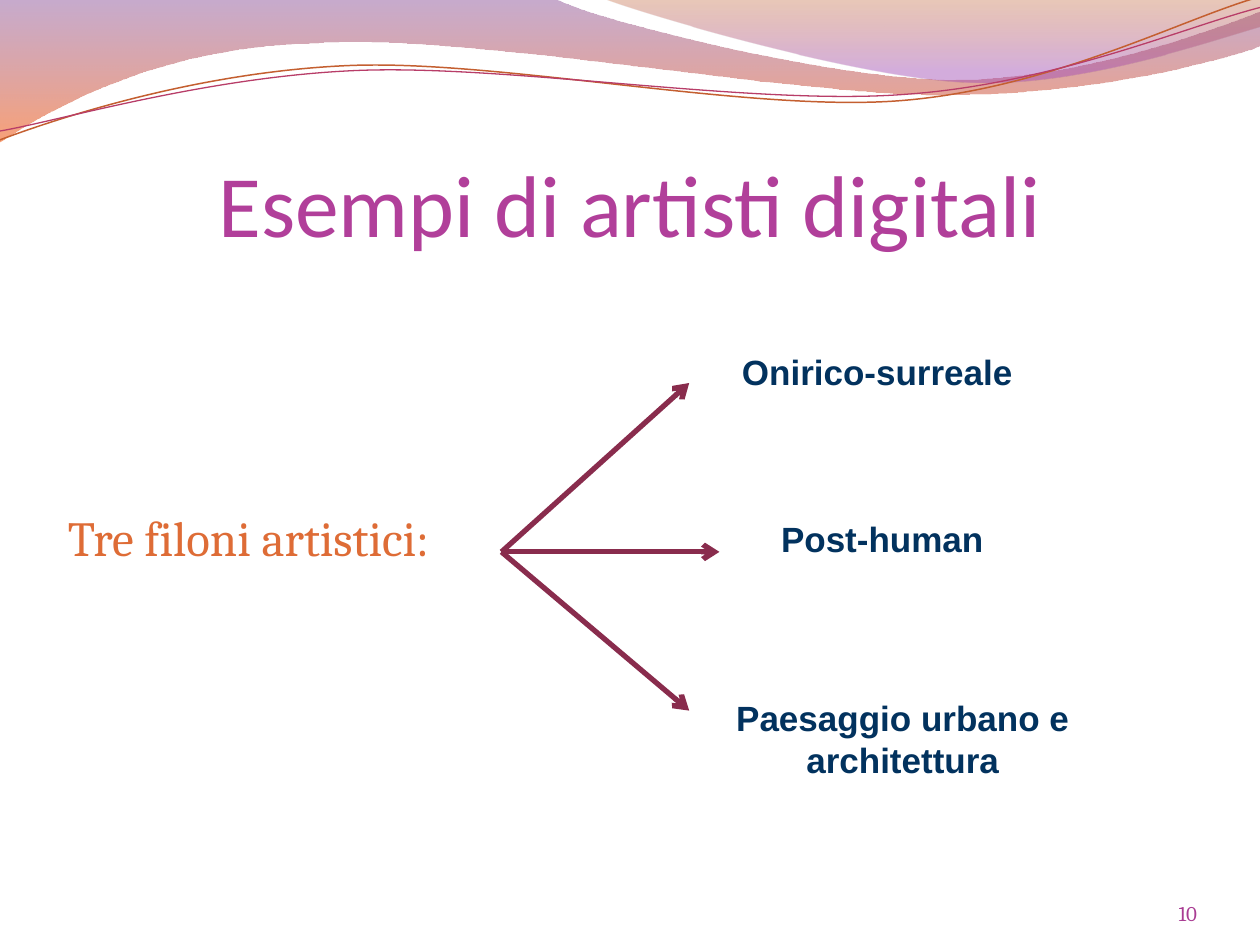
import math
import pptx
import pptx.util
import pptx.dml.color
import pptx.enum.shapes
import pptx.enum.text
import pptx.oxml.ns
from lxml import etree
from dataclasses import dataclass

TITLE = "Esempi di artisti digitali"
LEAD = "Tre filoni artistici:"
PAGE_NUMBER = "10"
BRANCHES = [
    ("Onirico-surreale", (5.79, 2.73, 3.46, 0.44), "left", (5.47, 3.04)),
    ("Post-human", (6.1, 4.06, 2.91, 0.44), "left", (5.71, 4.38)),
    ("Paesaggio urbano e architettura", (5.71, 5.48, 2.91, 0.77), "center", (5.47, 5.64)),
]


@dataclass(frozen=True)
class Theme:
    title: tuple = ("Calibri", 50, "B13F9A", False)
    lead: tuple = ("Cambria", 28, "DE6C36", False)
    branch: tuple = ("Arial", 20, "02325E", True)
    number: tuple = ("Cambria", 12, "A93C93", False)
    arrow: tuple = ("892C4D", 3)
    orange_line: tuple = ("C45F30", 0.85)
    pink_line: tuple = ("B83D68", 0.75)
    wide_wave: tuple = ((0, "834591", 45), (1, "F35307", 55))
    right_wave: tuple = ((0, "B74915", 30), (0.8, "A14BB4", 45))


THEME = Theme()

WAVES = [
    (THEME.wide_wave, [
        (0, 0), (4.4, -0.01),
        (4.76, 0.17, 6.64, 0.63, 7.58, 0.63), (8.53, 0.63, 9.58, 0.26, 10, 0.09),
        (10.01, 0.36),
        (9.83, 0.44, 8.7, 0.76, 7.46, 0.75), (6.22, 0.75, 3.82, 0.28, 2.57, 0.34),
        (1.29, 0.36, 0.46, 0.83, -0.01, 1.13), (0, 0),
    ]),
    (THEME.right_wave, [
        (4.79, -0.01),
        (5.09, 0.11, 6.82, 0.62, 7.69, 0.65), (8.56, 0.69, 9.61, 0.32, 10, 0.21),
        (10, 0), (4.79, -0.01),
    ]),
]
STRAND_TILT = -2.7
STRANDS = [
    (THEME.orange_line, (4.99, 0.58), [
        (0, 1.11), (0.48, 0.93, 1.58, 0.57, 2.77, 0.52),
        (3.95, 0.47, 5.93, 0.89, 7.13, 0.8), (8.33, 0.71, 9.38, 0.15, 9.98, -0.02),
    ]),
    (THEME.pink_line, (5, 0.59), [
        (0, 1.04), (0.47, 0.96, 1.64, 0.61, 2.83, 0.56),
        (4.03, 0.51, 5.97, 0.84, 7.17, 0.75), (8.36, 0.67, 9.41, 0.21, 10, 0.06),
    ]),
]

COLUMNS, ROWS = 10, 7.5
ALIGN = {
    "left": pptx.enum.text.PP_ALIGN.LEFT,
    "center": pptx.enum.text.PP_ALIGN.CENTER,
    "right": pptx.enum.text.PP_ALIGN.RIGHT,
}
TOP = pptx.enum.text.MSO_ANCHOR.TOP
BOTTOM = pptx.enum.text.MSO_ANCHOR.BOTTOM

deck = pptx.Presentation()
deck.slide_width = pptx.util.Inches(10)
deck.slide_height = pptx.util.Inches(7.5)
page = deck.slides.add_slide(deck.slide_layouts[6])


def grid(*values):
    return [round(value * deck.slide_width / COLUMNS) for value in values]


def rgb(code):
    return pptx.dml.color.RGBColor.from_string(code)


def add_child(parent, tag, **attributes):
    return etree.SubElement(parent, pptx.oxml.ns.qn(tag), **attributes)


def pairs(segment):
    return list(zip(segment[::2], segment[1::2]))


def turn(segment, pivot, degrees):
    cosine, sine = math.cos(math.radians(degrees)), math.sin(math.radians(degrees))
    turned = []
    for x, y in pairs(segment):
        across, down = x - pivot[0], y - pivot[1]
        turned += [pivot[0] + across * cosine - down * sine,
                   pivot[1] + across * sine + down * cosine]
    return turned


def add_outline(shapes, segments, close):
    points = [grid(*point) for segment in segments for point in pairs(segment)]
    builder = shapes.build_freeform(*points[0])
    builder.add_line_segments(points[1:], close=close)
    shape = builder.convert_to_shape()
    shape.shadow.inherit = False
    steps = iter(shape.element.spPr.findall(".//" + pptx.oxml.ns.qn("a:lnTo")))
    for segment in segments[1:]:
        step = next(steps)
        if len(segment) == 6:
            step.tag = pptx.oxml.ns.qn("a:cubicBezTo")
            for _ in range(2):
                following = next(steps)
                step.append(following[0])
                following.getparent().remove(following)
    return shape


def set_line(line, style):
    color, width = style
    line.color.rgb = rgb(color)
    line.width = pptx.util.Pt(width)


def add_wave(stops, segments):
    wave = add_outline(page.shapes, segments, True)
    wave.line.fill.background()
    wave.fill.gradient()
    wave.fill.gradient_angle = 270
    nodes = wave.element.spPr.findall(".//" + pptx.oxml.ns.qn("a:gs"))
    for stop, node, (position, color, opacity) in zip(wave.fill.gradient_stops, nodes, stops):
        stop.position = position
        stop.color.rgb = rgb(color)
        add_child(node[0], "a:alpha", val=str(opacity * 1000))


def add_strand(group, style, pivot, segments):
    level = [turn(segment, pivot, -STRAND_TILT) for segment in segments]
    strand = add_outline(group.shapes, level, False)
    strand.rotation = STRAND_TILT
    strand.fill.background()
    set_line(strand.line, style)


def add_text(text, place, style, align="left", anchor=TOP, insets=(0.1, 0.05, 0.1, 0.05)):
    box = page.shapes.add_textbox(*grid(*place))
    frame = box.text_frame
    frame.word_wrap = True
    frame.vertical_anchor = anchor
    (frame.margin_left, frame.margin_top,
     frame.margin_right, frame.margin_bottom) = grid(*insets)
    para = frame.paragraphs[0]
    para.text = text
    para.alignment = ALIGN[align]
    name, size, color, bold = style
    para.font.name = name
    para.font.size = pptx.util.Pt(size)
    para.font.bold = bold
    para.font.color.rgb = rgb(color)
    return box


def add_arrow(source, target):
    arrow = page.shapes.add_connector(
        pptx.enum.shapes.MSO_CONNECTOR.STRAIGHT, 0, 0, *grid(*target)
    )
    arrow.begin_connect(source, 3)
    set_line(arrow.line, THEME.arrow)
    line = arrow.element.spPr.find(pptx.oxml.ns.qn("a:ln"))
    add_child(line, "a:tailEnd", type="arrow")
    add_child(arrow.element.spPr, "a:effectLst")


for stops, segments in WAVES:
    add_wave(stops, segments)
strands = page.shapes.add_group_shape()
for style, pivot, segments in STRANDS:
    add_strand(strands, style, pivot, segments)

add_text(TITLE, (0.5, 0.77, COLUMNS - 1, 1.25), THEME.title, "center", BOTTOM, (0, 0.05, 0, 0))
lead = add_text(LEAD, (0.44, 3.98, 3.54, 0.8), THEME.lead)
add_text(PAGE_NUMBER, (8.67, ROWS - 0.55, 0.83, 0.4), THEME.number, "right", BOTTOM, (0, 0, 0, 0))

for label, place, align, tip in BRANCHES:
    add_arrow(lead, tip)
for label, place, align, tip in BRANCHES:
    add_text(label, place, THEME.branch, align)

deck.save("out.pptx")
